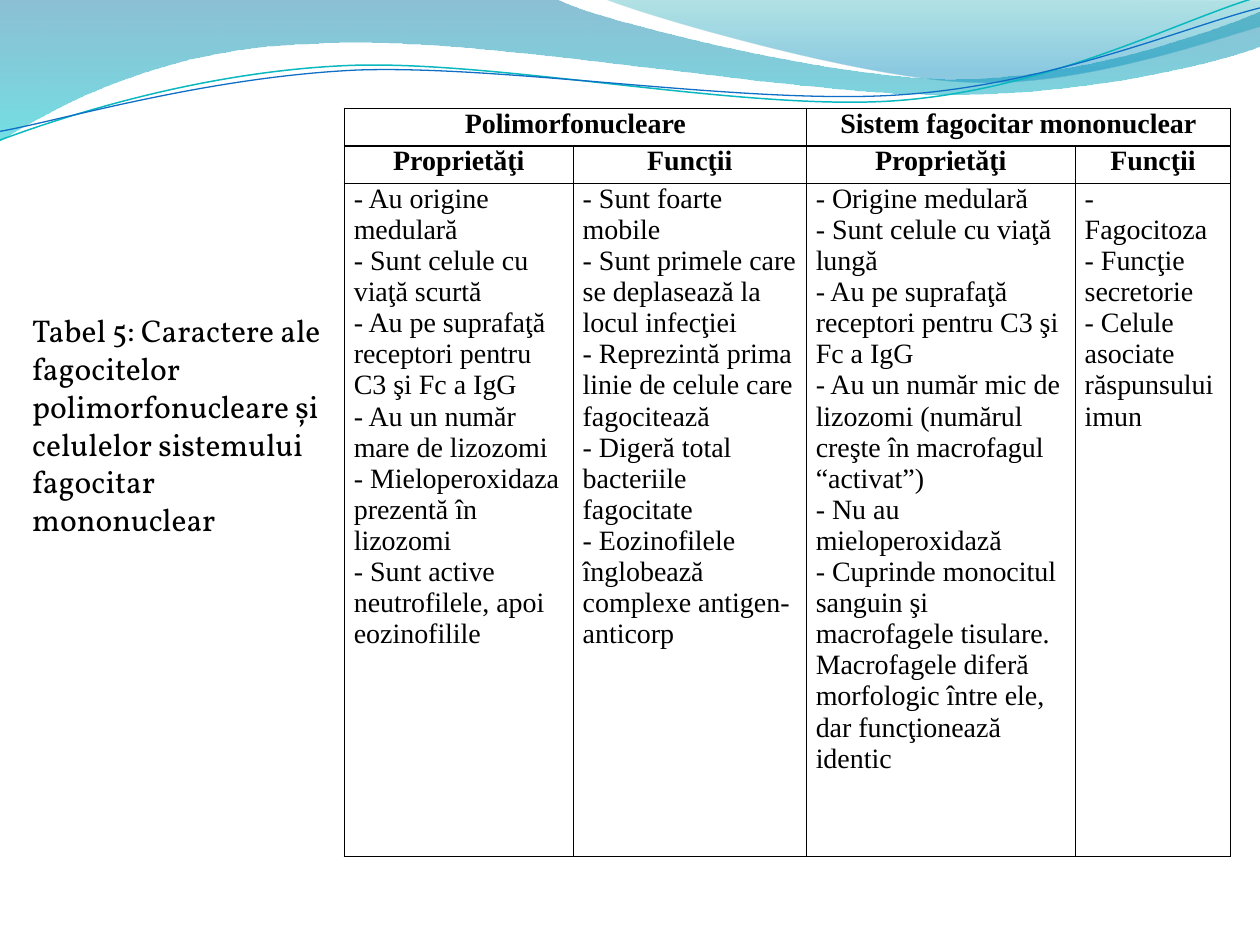
from lxml import etree
from pptx import Presentation
from pptx import util as u
from pptx.dml.color import RGBColor
from pptx.enum import lang, text
from pptx.oxml.ns import qn

CAPTION = ("Tabel 5: Caractere ale fagocitelor polimorfonucleare şi "
           "celulelor sistemului fagocitar mononuclear")
GROUPS = ["Polimorfonucleare", "Sistem fagocitar mononuclear"]
HEADS = ["Proprietăţi", "Funcţii"]
COLUMNS = [
    ["Au origine medulară", "Sunt celule cu viaţă scurtă",
     "Au pe suprafaţă receptori pentru C3 şi Fc a IgG",
     "Au un număr mare de lizozomi",
     "Mieloperoxidaza prezentă în lizozomi",
     "Sunt active neutrofilele, apoi eozinofilile"],
    ["Sunt foarte mobile",
     "Sunt primele care se deplasează la locul infecţiei",
     "Reprezintă prima linie de celule care fagocitează",
     "Digeră total bacteriile fagocitate",
     "Eozinofilele înglobează complexe antigen-anticorp"],
    ["Origine medulară", "Sunt celule cu viaţă lungă",
     "Au pe suprafaţă receptori pentru C3 şi Fc a IgG",
     "Au un număr mic de lizozomi (numărul creşte în macrofagul “activat”)",
     "Nu au mieloperoxidază",
     "Cuprinde monocitul sanguin şi macrofagele tisulare. Macrofagele diferă "
     "morfologic între ele, dar funcţionează identic"],
    ["Fagocitoza", "Funcţie secretorie", "Celule asociate răspunsului imun"],
]
WIDTHS = [130.8, 133.2, 153.7, 88.7]
HEIGHTS = [21.4, 21.4, 384.6]
TABLE_LEFT, TABLE_TOP = 196.8, 62

WAVES = [
    ((-1, -1, 722, 82),
     [[(0, 0)], [(317, -1)], [(343, 12), (478, 45), (546, 45)],
      [(614, 45), (690, 19), (720, 6.5)], [(721, 26)],
      [(708, 32), (626, 55), (537, 54)], [(448, 54), (275, 20), (185, 24.5)],
      [(93, 26), (33, 60), (-1, 81)]],
     [(0, "0074A1", 45), (1, "00C6CF", 55)]),
    ((345, -1, 375, 50.4),
     [[(345, -1)], [(366, 8), (491, 45), (554, 47)],
      [(616, 50), (692, 23), (720, 15)], [(720, 0)]],
     [(0, "00A1A9", 30), (0.8, "008BBF", 45)]),
]
STRAND_TURN = 357.3
STRANDS = [
    ((-1.4, 15.8, 721.4, 51.1),
     [[(-1.4, 63.1)], [(34.2, 51.7), (114.3, 29.4), (199.4, 29.9)],
      [(284.4, 30.5), (425.9, 67.2), (512.1, 64.7)],
      [(599.3, 62.3), (676.1, 25.9), (720.1, 15.4)]],
     "0AB8BF", 0.85),
    ((-1.4, 21.6, 722.2, 41.8),
     [[(-1.1, 58.1)], [(33.1, 53.7), (118.2, 32.6), (204.3, 32.7)],
      [(290.3, 33.7), (429.1, 63.8), (515.3, 61.4)],
      [(601.5, 59.4), (679, 30), (721.4, 21.5)]],
     "0F6FC6", 0.75),
]


def rgb(value):
    return RGBColor.from_string(value)


def place(shape, frame):
    for name, value in zip(("left", "top", "width", "height"), frame):
        setattr(shape, name, u.Pt(value))


def add_outline(shapes, frame, segments, close):
    ends = [(u.Pt(x), u.Pt(y)) for x, y in (seg[-1] for seg in segments)]
    fb = shapes.build_freeform(*ends[0])
    fb.add_line_segments(ends[1:], close=close)
    sp = fb.convert_to_shape()
    sp.shadow.inherit = False
    place(sp, frame)
    left, top, width, height = frame
    path = next(sp._element.iter(qn("a:path")))
    path.set("w", str(u.Pt(width)))
    path.set("h", str(u.Pt(height)))
    steps = [child for child in path if child.tag != qn("a:close")]
    for step, seg in zip(steps, segments):
        tag = qn("a:cubicBezTo") if len(seg) == 3 else step.tag
        move = etree.Element(tag)
        for x, y in seg:
            etree.SubElement(move, qn("a:pt"), x=str(u.Pt(x - left)), y=str(u.Pt(y - top)))
        path.replace(step, move)
    return sp


def add_wave(shapes, frame, segments, stops):
    sp = add_outline(shapes, frame, segments, True)
    sp.line.fill.background()
    sp.fill.gradient()
    sp.fill.gradient_angle = 270
    for stop, (position, color, _) in zip(sp.fill.gradient_stops, stops):
        stop.position = position
        stop.color.rgb = rgb(color)
    for clr, (_, _, alpha) in zip(sp._element.spPr.iter(qn("a:srgbClr")), stops):
        etree.SubElement(clr, qn("a:alpha"), val=str(alpha * 1000))


def add_strand(shapes, frame, segments, color, width):
    sp = add_outline(shapes, frame, segments, False)
    sp.rotation = STRAND_TURN
    sp.fill.background()
    sp.line.color.rgb = rgb(color)
    sp.line.width = u.Pt(width)


def write(tf, lines, align, **fmt):
    for i, line in enumerate(lines):
        p = tf.paragraphs[0] if i == 0 else tf.add_paragraph()
        p.alignment = align
        r = p.add_run()
        r.text = line
        r.font.color.rgb = rgb("000000")
        for name, value in fmt.items():
            setattr(r.font, name, value)


def style_cell(cell):
    tcPr = cell._tc.get_or_add_tcPr()
    for side in ("a:lnL", "a:lnR", "a:lnT", "a:lnB"):
        ln = etree.SubElement(tcPr, qn(side), w=str(u.Pt(1)))
        fill = etree.SubElement(ln, qn("a:solidFill"))
        etree.SubElement(fill, qn("a:srgbClr"), val="000000")
    cell.fill.background()
    margins = dict(margin_left=5.4, margin_right=5.4, margin_top=0, margin_bottom=0)
    for name, value in margins.items():
        setattr(cell, name, u.Pt(value))


def add_cells_table(shapes):
    tbl = shapes.add_table(len(HEIGHTS), len(WIDTHS), u.Pt(TABLE_LEFT), u.Pt(TABLE_TOP),
                           u.Pt(sum(WIDTHS)), u.Pt(sum(HEIGHTS))).table
    tbl.first_row = tbl.horz_banding = False
    for col, width in zip(tbl.columns, WIDTHS):
        col.width = u.Pt(width)
    for row, height in zip(tbl.rows, HEIGHTS):
        row.height = u.Pt(height)
    for cell in tbl.iter_cells():
        style_cell(cell)
    fmt = dict(name="Times New Roman", size=u.Pt(16))
    center, left = text.PP_ALIGN.CENTER, text.PP_ALIGN.LEFT
    for g, group in enumerate(GROUPS):
        tbl.cell(0, 2 * g).merge(tbl.cell(0, 2 * g + 1))
        write(tbl.cell(0, 2 * g).text_frame, [group], center, bold=True, **fmt)
    for c, items in enumerate(COLUMNS):
        write(tbl.cell(1, c).text_frame, [HEADS[c % 2]], center, bold=True, **fmt)
        write(tbl.cell(2, c).text_frame, [f"- {item}" for item in items], left,
              bold=False, **fmt)


def add_caption(title):
    place(title, (11.2, 174.2, 185.8, 138.2))
    tf = title.text_frame
    tf.word_wrap = True
    tf.auto_size = text.MSO_AUTO_SIZE.SHAPE_TO_FIT_TEXT
    tf.vertical_anchor = text.MSO_ANCHOR.TOP
    write(tf, [CAPTION], text.PP_ALIGN.LEFT, name="Vollkorn", size=u.Pt(18),
          language_id=lang.MSO_LANGUAGE_ID.ROMANIAN)


def main():
    prs = Presentation()
    prs.slide_width, prs.slide_height = u.Pt(720), u.Pt(540)
    s = prs.slides.add_slide(prs.slide_layouts[5])
    for wave in WAVES:
        add_wave(s.shapes, *wave)
    strands = s.shapes.add_group_shape()
    for strand in STRANDS:
        add_strand(strands.shapes, *strand)
    add_cells_table(s.shapes)
    add_caption(s.shapes.title)
    prs.save("out.pptx")


if __name__ == "__main__":
    main()
